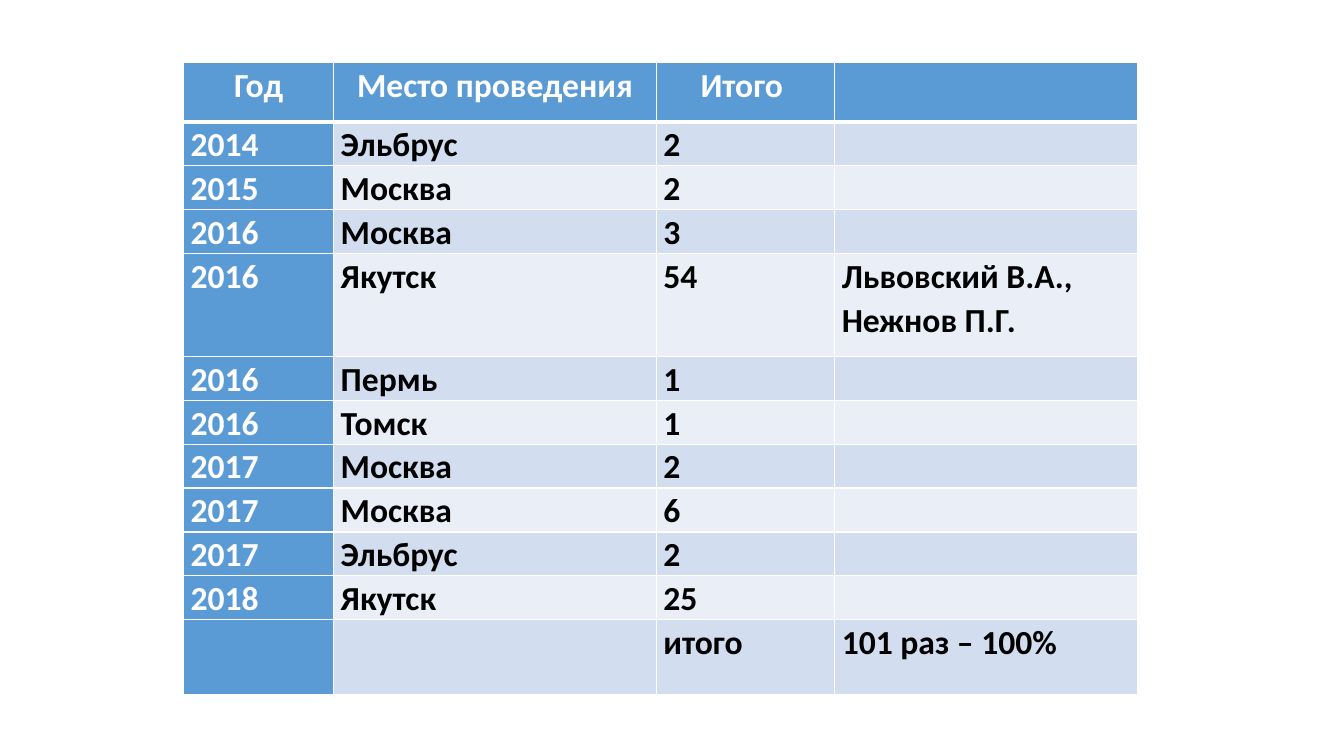
from lxml import etree
from pptx import Presentation
from pptx.dml.color import RGBColor
from pptx.enum.text import PP_ALIGN
from pptx.oxml.ns import qn
from pptx.util import Inches, Pt

CENTER, LEFT = PP_ALIGN.CENTER, PP_ALIGN.LEFT
WHITE = RGBColor(0xFF, 0xFF, 0xFF)
BLACK = RGBColor(0x00, 0x00, 0x00)
BLUE = RGBColor(0x5B, 0x9B, 0xD5)
BANDS = [RGBColor(0xEA, 0xEF, 0xF7), RGBColor(0xD2, 0xDE, 0xEF)]

COL_WIDTHS = [1.49, 3.2, 1.77, 3]
ROW_HEIGHT = 0.37
TALL_ROWS = {0: 0.59, 4: 1.02, 11: 0.74}
MARGINS = {"margin_left": Inches(0.07), "margin_right": Inches(0.07),
           "margin_top": 0, "margin_bottom": 0}
FONT = {"name": "Calibri", "size": Pt(24), "bold": True}

ROWS = [
    ("Год", "Место проведения", "Итого ", ""),
    ("2014", "Эльбрус", "2", ""),
    ("2015", "Москва", "2", ""),
    ("2016", "Москва", "3", ""),
    ("2016", "Якутск", "54", "Львовский В.А., Нежнов П.Г."),
    ("2016", "Пермь", "1", ""),
    ("2016", "Томск", "1", ""),
    ("2017", "Москва", "2", ""),
    ("2017", "Москва", "6", ""),
    ("2017", "Эльбрус", "2", ""),
    ("2018", "Якутск", "25", ""),
    ("", "", "итого", "101 раз – 100%"),
]


def set_attrs(obj, values):
    for name, value in values.items():
        setattr(obj, name, value)


def set_borders(cell, widths):
    tc_pr = cell._tc.get_or_add_tcPr()
    for side, width in widths.items():
        ln = etree.SubElement(tc_pr, qn(f"a:ln{side}"), w=str(Pt(width)))
        fill = etree.SubElement(ln, qn("a:solidFill"))
        etree.SubElement(fill, qn("a:srgbClr"), val=str(WHITE))


def set_text(cell, text, color, align):
    p = cell.text_frame.paragraphs[0]
    set_attrs(p, {"alignment": align, "line_spacing": 1.07})
    r = p.add_run()
    r.text = text
    set_attrs(r.font, FONT)
    r.font.color.rgb = color


def format_cell(cell, text, row, col):
    is_heading = row == 0 or col == 0
    set_attrs(cell, MARGINS)
    set_borders(cell, {"L": 1, "R": 1, "T": 3 if row == 1 else 1,
                       "B": 3 if row == 0 else 1})
    cell.fill.solid()
    cell.fill.fore_color.rgb = BLUE if is_heading else BANDS[row % 2]
    if text:
        set_text(cell, text, WHITE if is_heading else BLACK,
                 CENTER if row == 0 else LEFT)


def add_events_table(s):
    heights = [TALL_ROWS.get(i, ROW_HEIGHT) for i in range(len(ROWS))]
    table = s.shapes.add_table(
        len(ROWS), len(COL_WIDTHS), Inches(1.82), Inches(0.62),
        Inches(sum(COL_WIDTHS)), Inches(sum(heights))).table
    table.first_col = True
    for column, width in zip(table.columns, COL_WIDTHS):
        column.width = Inches(width)
    for i, (height, texts) in enumerate(zip(heights, ROWS)):
        table.rows[i].height = Inches(height)
        for j, text in enumerate(texts):
            format_cell(table.cell(i, j), text, i, j)


def main():
    prs = Presentation()
    set_attrs(prs, {"slide_width": Inches(13.33), "slide_height": Inches(7.5)})
    s = prs.slides.add_slide(prs.slide_layouts[6])
    add_events_table(s)
    prs.save("out.pptx")


if __name__ == "__main__":
    main()
